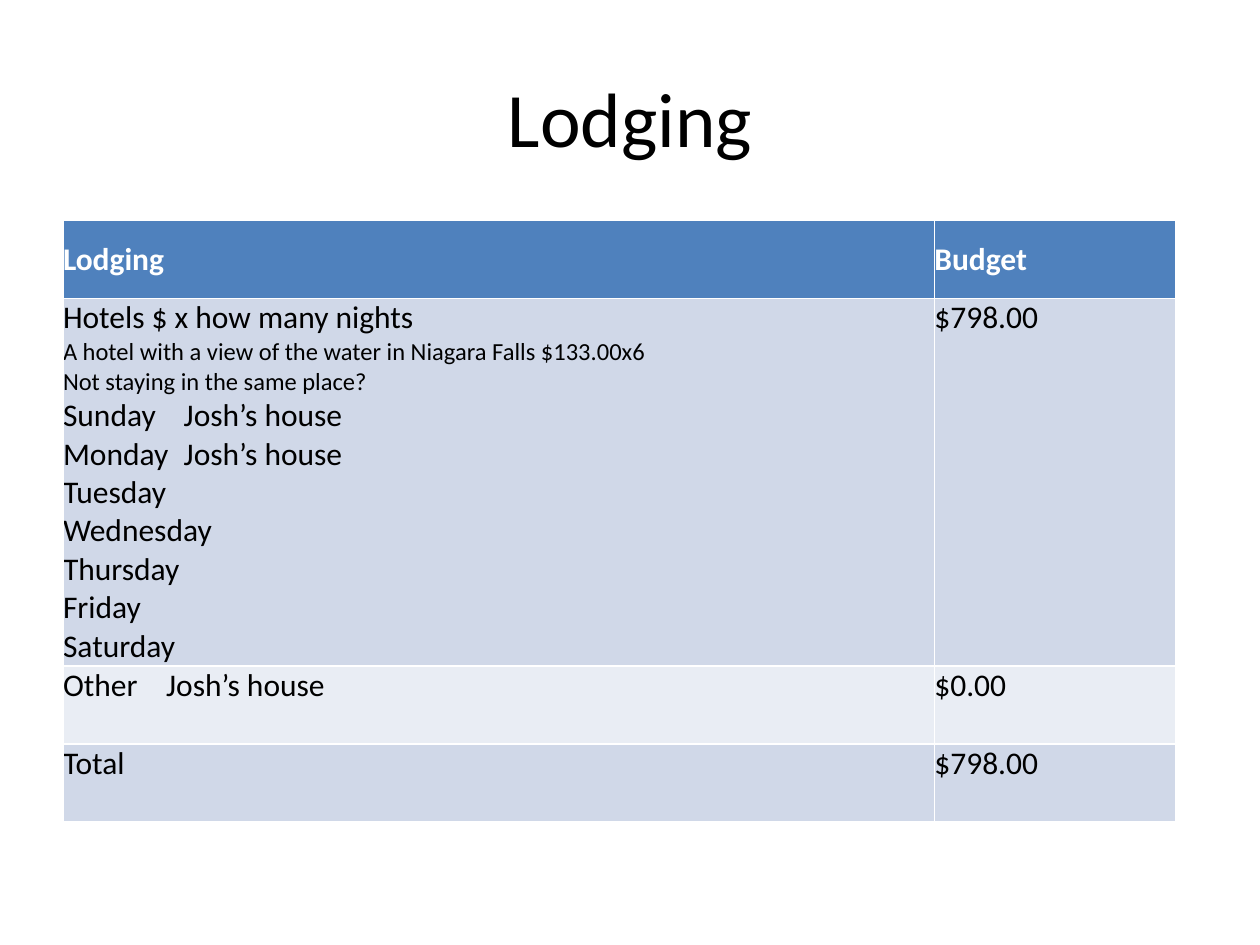
from lxml.etree import SubElement
from pptx import Presentation
from pptx.dml.color import RGBColor
from pptx.enum.text import MSO_ANCHOR, PP_ALIGN
from pptx.oxml.ns import qn
from pptx.util import Pt

BLACK = RGBColor(0x00, 0x00, 0x00)
WHITE = RGBColor(0xFF, 0xFF, 0xFF)
HEADER_BLUE = RGBColor(0x4F, 0x81, 0xBD)
BAND_DARK = RGBColor(0xD0, 0xD8, 0xE8)
BAND_LIGHT = RGBColor(0xE9, 0xED, 0xF4)

FONT = "Calibri"
BODY_SIZE = 18
HOTEL_NAME = "A hotel with a view of the water in Niagara Falls $133.00x6"
SMALL_LINES = {HOTEL_NAME, "Not staying in the same place?"}
TAB_STOPS = {"Sunday": 69, "Monday": 69, "Other": 59}

HOTEL_LINES = [
    "Hotels $ x how many nights",
    HOTEL_NAME,
    "Not staying in the same place?",
    "Sunday\tJosh’s house",
    "Monday\tJosh’s house",
    "Tuesday",
    "Wednesday",
    "Thursday",
    "Friday",
    "Saturday",
]
ROWS = [
    (["Lodging"], ["Budget"]),
    (HOTEL_LINES, ["$798.00"]),
    (["Other\tJosh’s house"], ["$0.00"]),
    (["Total"], ["$798.00"]),
]
ROW_HEIGHTS = [44.64, 210, 44.64, 44.64]
COLUMN_SHARES = [0.783, 0.217]


def set_font(para, size, color, bold=False):
    para.font.name = FONT
    para.font.size = Pt(size)
    para.font.bold = bold
    para.font.color.rgb = color


def add_tab_stop(para, position):
    properties = para._p.get_or_add_pPr()
    tabs = SubElement(properties, qn("a:tabLst"))
    SubElement(tabs, qn("a:tab"), pos=str(Pt(position)), algn="l")


def place_title(page, text, left, top, width, height):
    title = page.shapes.title
    title.left, title.top = Pt(left), Pt(top)
    title.width, title.height = Pt(width), Pt(height)
    frame = title.text_frame
    frame.text = text
    frame.vertical_anchor = MSO_ANCHOR.MIDDLE
    para = frame.paragraphs[0]
    para.alignment = PP_ALIGN.CENTER
    set_font(para, 44, BLACK)


def fill_cell(cell, lines, fill, color, is_header):
    cell.margin_left = cell.margin_right = 0
    cell.margin_top = cell.margin_bottom = 0
    cell.vertical_anchor = MSO_ANCHOR.MIDDLE if is_header else MSO_ANCHOR.TOP
    cell.fill.solid()
    cell.fill.fore_color.rgb = fill
    frame = cell.text_frame
    frame.text = "\n".join(lines)
    for para, line in zip(frame.paragraphs, lines):
        if "\t" in line:
            add_tab_stop(para, TAB_STOPS[line.split("\t")[0]])
        set_font(para, 14 if line in SMALL_LINES else BODY_SIZE, color, is_header)


def place_budget_table(page, left, top, width):
    frame = page.shapes.add_table(
        len(ROWS), len(COLUMN_SHARES),
        Pt(left), Pt(top), Pt(width), Pt(sum(ROW_HEIGHTS)),
    )
    table = frame.table
    for column, share in zip(table.columns, COLUMN_SHARES):
        column.width = Pt(width * share)
    for index, (row, height, texts) in enumerate(zip(table.rows, ROW_HEIGHTS, ROWS)):
        row.height = Pt(height)
        is_header = index == 0
        band = BAND_DARK if index % 2 else BAND_LIGHT
        fill = HEADER_BLUE if is_header else band
        color = WHITE if is_header else BLACK
        for cell, lines in zip(row.cells, texts):
            fill_cell(cell, lines, fill, color, is_header)


def main():
    deck = Presentation()
    deck.slide_width, deck.slide_height = Pt(720), Pt(540)
    page = deck.slides.add_slide(deck.slide_layouts.get_by_name("Title Only"))
    place_title(page, "Lodging", 36, 21.6, 648, 90)
    place_budget_table(page, 36, 126, 636)
    deck.save("out.pptx")


if __name__ == "__main__":
    main()
